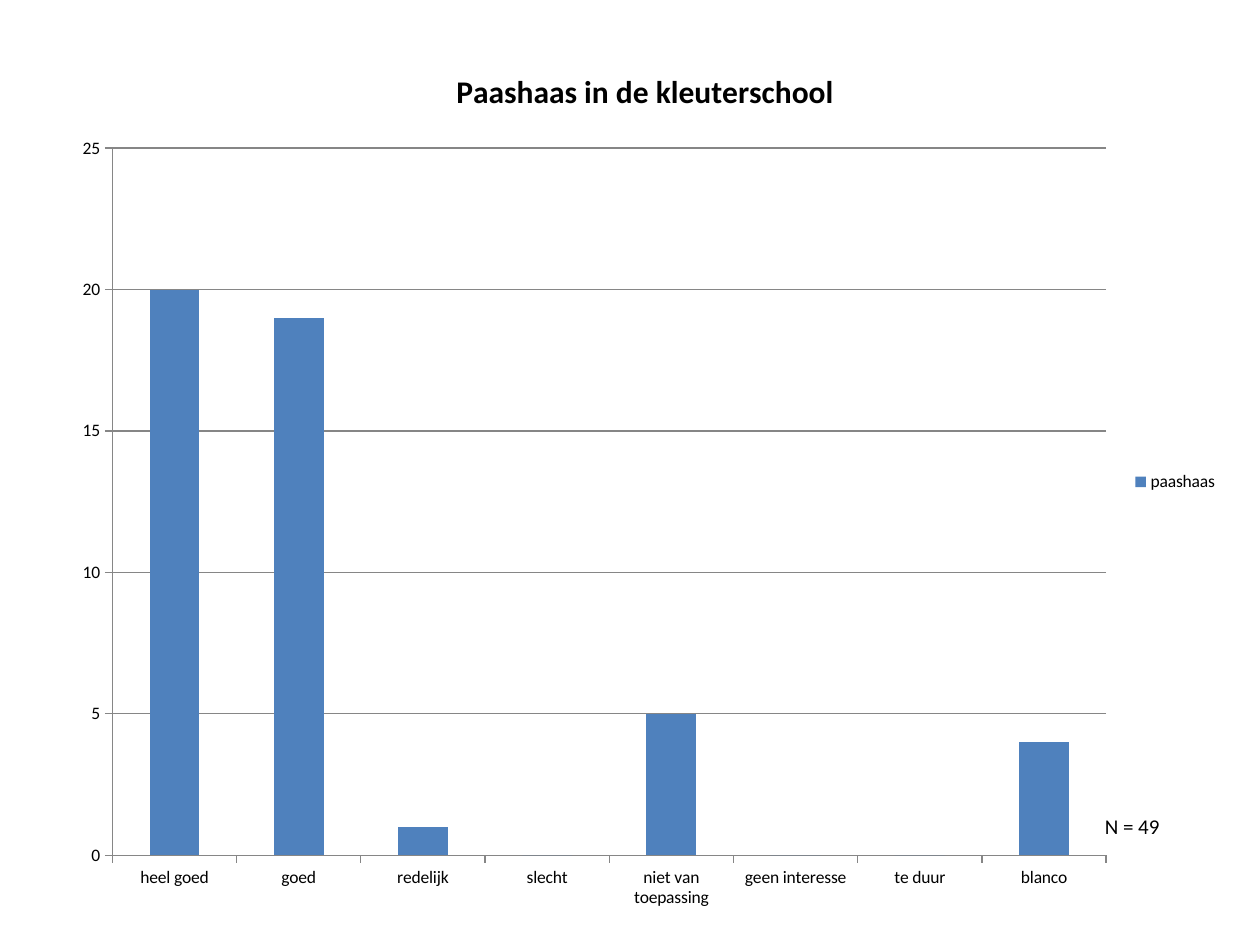
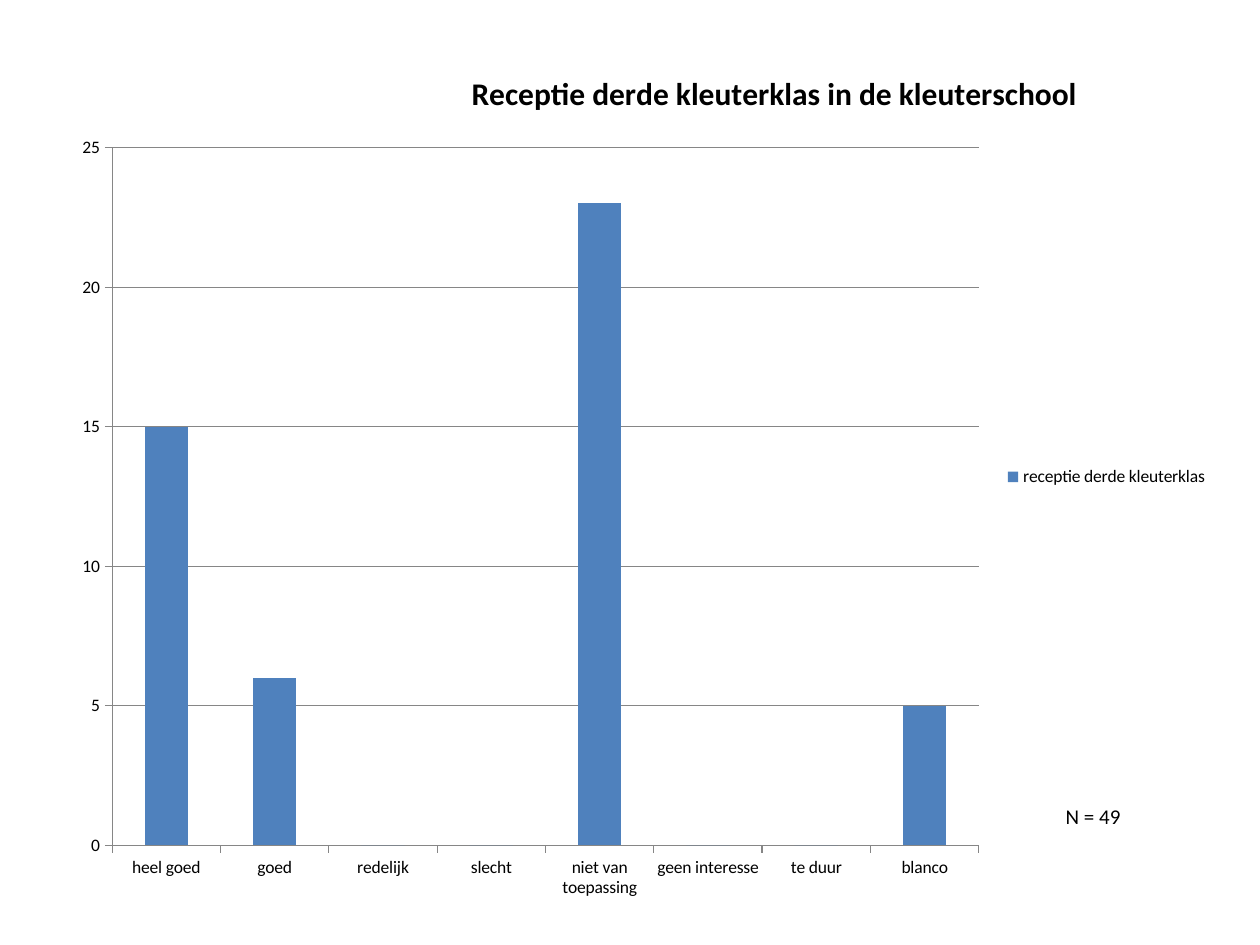
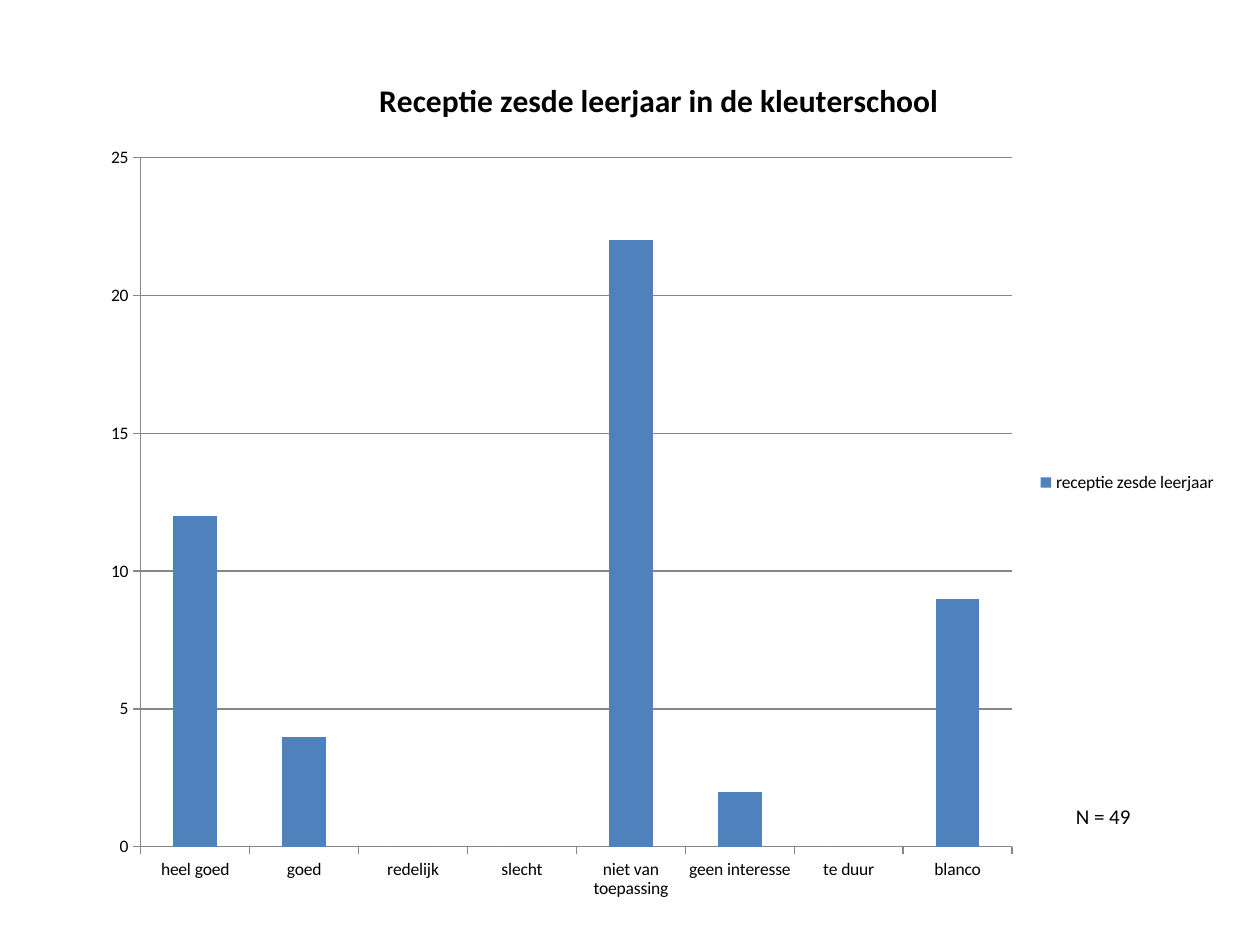
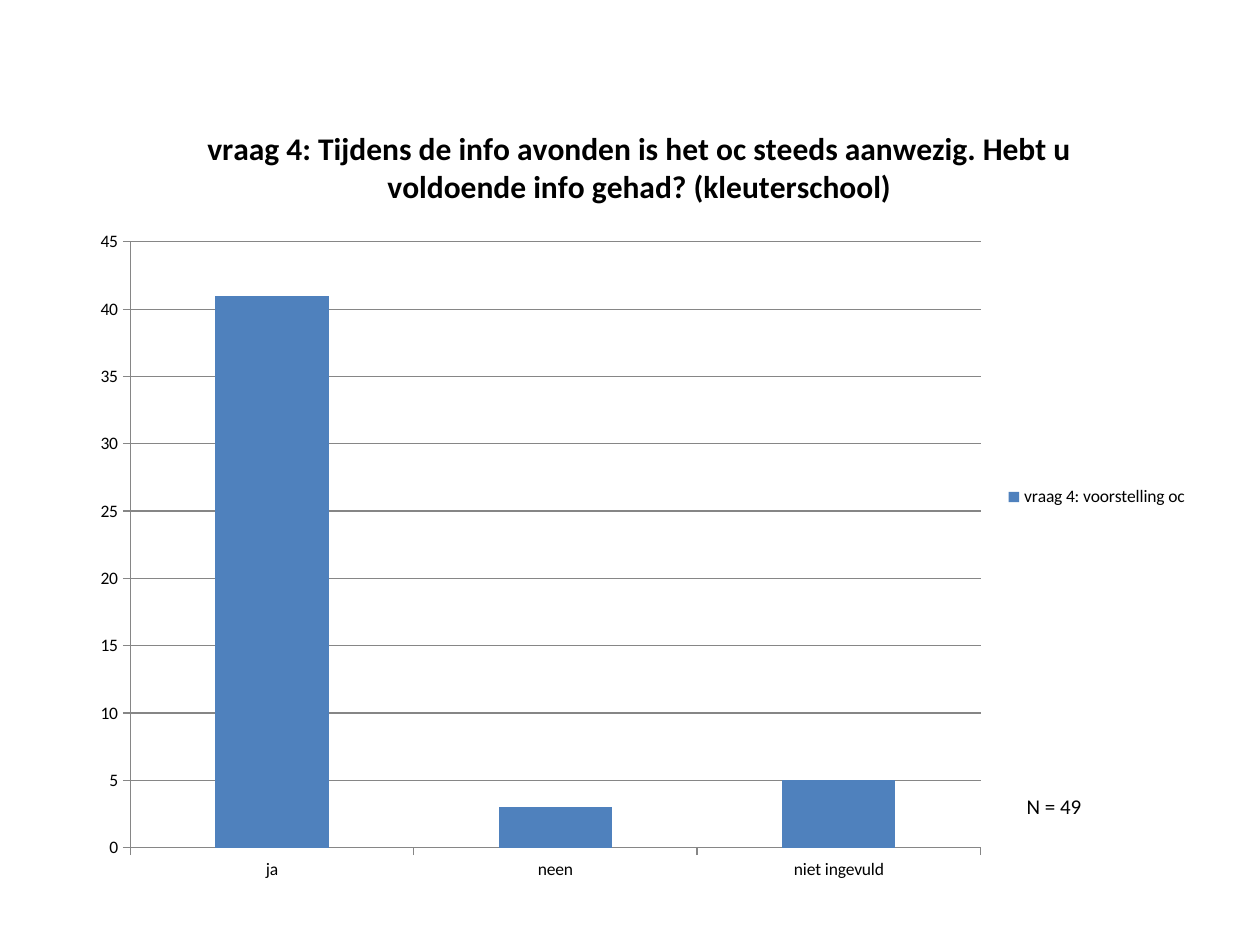
from dataclasses import dataclass

from pptx import Presentation
from pptx import util as u
from pptx.chart.data import CategoryChartData
from pptx.dml.color import RGBColor
from pptx.enum import chart as ch, text
from pptx.oxml import parse_xml
from pptx.oxml.ns import nsdecls, qn


@dataclass(frozen=True)
class Theme:
    font: str = "Calibri"
    ink: RGBColor = RGBColor(0x00, 0x00, 0x00)
    bar: RGBColor = RGBColor(0x4F, 0x81, 0xBD)
    rule: RGBColor = RGBColor(0x86, 0x86, 0x86)
    title_size: u.Pt = u.Pt(18)
    label_size: u.Pt = u.Pt(10)
    note_size: u.Pt = u.Pt(12)
    rule_width: u.Pt = u.Pt(0.75)
    gap_width: int = 150


@dataclass(frozen=True)
class Survey:
    """One question: its bar chart and where it sits, in inches."""
    title: str
    series: str
    answers: tuple[str, ...]
    counts: tuple[int, ...]
    chart_box: tuple[float, float, float, float]
    note_at: tuple[float, float]
    title_offset: tuple[float, float] | None = None  # share of chart width, height


THEME = Theme()
RESPONDENTS = "N = 49"
NOTE_SIZE = (1.17, 0.3)
RATINGS = ("heel goed", "goed", "redelijk", "slecht", "niet van toepassing",
           "geen interesse", "te duur", "blanco")

SURVEYS = (
    Survey("Paashaas in de kleuterschool", "paashaas",
           RATINGS, (20, 19, 1, 0, 5, 0, 0, 4),
           (0.47, 0.31, 9.3, 7.03), (8.67, 6.41)),
    Survey("Receptie derde kleuterklas in de kleuterschool",
           "receptie derde kleuterklas",
           RATINGS, (15, 6, 0, 0, 23, 0, 0, 5),
           (0.47, 0.31, 9.22, 6.95), (8.36, 6.33), title_offset=(0.35, 0.03)),
    Survey("Receptie zesde leerjaar in de kleuterschool",
           "receptie zesde leerjaar",
           RATINGS, (12, 4, 0, 0, 22, 2, 0, 9),
           (0.7, 0.39, 9.06, 6.88), (8.44, 6.33)),
    Survey("vraag 4: Tijdens de info avonden is het oc steeds aanwezig. "
           "Hebt u voldoende info gehad? (kleuterschool)",
           "vraag 4: voorstelling oc",
           ("ja", "neen", "niet ingevuld"), (41, 3, 5),
           (0.62, 0.78, 8.91, 6.33), (8.05, 6.25)),
)


def style_font(font, size: u.Pt, bold: bool = False) -> None:
    font.name = THEME.font
    font.size = size
    font.bold = bold
    font.color.rgb = THEME.ink


def style_line(line) -> None:
    line.color.rgb = THEME.rule
    line.width = THEME.rule_width


def place_title(chart, offset: tuple[float, float]) -> None:
    """Pin the chart title's top left corner."""
    title = chart.element.find(".//" + qn("c:title"))
    for layout in title.findall(qn("c:layout")):
        title.remove(layout)
    x, y = offset
    title.find(qn("c:tx")).addnext(parse_xml(
        f'<c:layout {nsdecls("c")}><c:manualLayout>'
        '<c:xMode val="edge"/><c:yMode val="edge"/>'
        f'<c:x val="{x}"/><c:y val="{y}"/>'
        '</c:manualLayout></c:layout>'))


def add_survey_chart(slide, survey: Survey) -> None:
    data = CategoryChartData()
    data.categories = survey.answers
    data.add_series(survey.series, survey.counts)
    chart = slide.shapes.add_chart(
        ch.XL_CHART_TYPE.COLUMN_CLUSTERED,
        *map(u.Inches, survey.chart_box), data).chart
    style_font(chart.font, THEME.label_size)

    # Title
    chart.has_title = True
    heading = chart.chart_title.text_frame
    heading.text = survey.title
    style_font(heading.paragraphs[0].font, THEME.title_size, bold=True)
    if survey.title_offset:
        place_title(chart, survey.title_offset)

    # Legend
    chart.has_legend = True
    chart.legend.position = ch.XL_LEGEND_POSITION.RIGHT
    chart.legend.include_in_layout = False

    # Bars
    plot = chart.plots[0]
    plot.vary_by_categories = False
    plot.gap_width = THEME.gap_width
    bars = plot.series[0].format.fill
    bars.solid()
    bars.fore_color.rgb = THEME.bar

    # Axes and grid
    for axis in (chart.category_axis, chart.value_axis):
        axis.major_tick_mark = ch.XL_TICK_MARK.OUTSIDE
        axis.minor_tick_mark = ch.XL_TICK_MARK.NONE
        style_line(axis.format.line)
    chart.value_axis.has_major_gridlines = True
    style_line(chart.value_axis.major_gridlines.format.line)


def add_respondents(slide, at: tuple[float, float]) -> None:
    frame = slide.shapes.add_textbox(*map(u.Inches, at + NOTE_SIZE)).text_frame
    frame.word_wrap = True
    frame.auto_size = text.MSO_AUTO_SIZE.SHAPE_TO_FIT_TEXT
    frame.text = RESPONDENTS
    style_font(frame.paragraphs[0].font, THEME.note_size)


def main() -> None:
    deck = Presentation()
    deck.slide_width, deck.slide_height = u.Inches(10), u.Inches(7.5)
    blank = deck.slide_layouts.get_by_name("Blank")
    for survey in SURVEYS:
        slide = deck.slides.add_slide(blank)
        add_survey_chart(slide, survey)
        add_respondents(slide, survey.note_at)
    deck.save("out.pptx")


if __name__ == "__main__":
    main()
